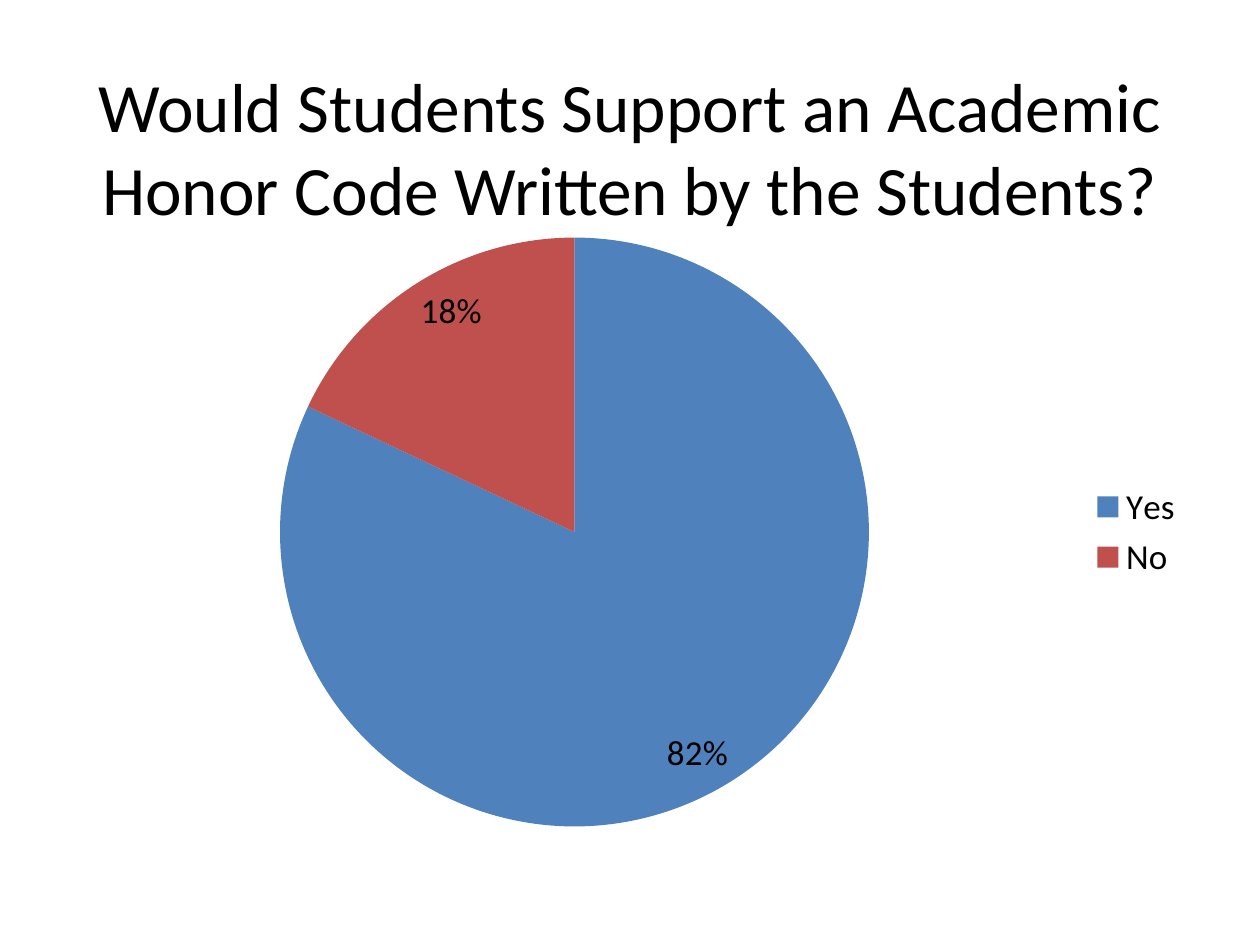
"""Build a slide with a question as title and a pie chart of the answers."""
from dataclasses import dataclass

import pptx
import pptx.chart.data
import pptx.dml.color
import pptx.enum.chart
import pptx.enum.text
import pptx.util

BLACK = pptx.dml.color.RGBColor(0x00, 0x00, 0x00)
BLUE = pptx.dml.color.RGBColor(0x4F, 0x81, 0xBD)
RED = pptx.dml.color.RGBColor(0xC0, 0x50, 0x4D)
WIDTH = pptx.util.Inches(10)
HEIGHT = pptx.util.Inches(7.5)
FONT = "Calibri"
QUESTION = "Would Students Support an Academic Honor Code Written by the Students?"


@dataclass(frozen=True)
class Area:
    left: float
    top: float
    width: float
    height: float

    def lengths(self) -> tuple[int, int, int, int]:
        return (
            round(self.left * WIDTH),
            round(self.top * HEIGHT),
            round(self.width * WIDTH),
            round(self.height * HEIGHT),
        )


@dataclass(frozen=True)
class Answer:
    name: str
    percent: int
    color: pptx.dml.color.RGBColor


TITLE_AREA = Area(0.05, 0.04, 0.9, 0.23)
CHART_AREA = Area(0.05, 0.233, 0.9, 0.66)
ANSWERS = (Answer("Yes", 82, BLUE), Answer("No", 18, RED))


def set_values(target: object, values: dict[str, object]) -> None:
    for name, value in values.items():
        setattr(target, name, value)


def set_font(font: pptx.text.text.Font, size: float) -> None:
    set_values(font, {"name": FONT, "size": pptx.util.Pt(size)})
    font.color.rgb = BLACK


def add_title(slide: pptx.slide.Slide, area: Area, text: str) -> None:
    frame = slide.shapes.add_textbox(*area.lengths()).text_frame
    set_values(frame, {
        "word_wrap": True,
        "vertical_anchor": pptx.enum.text.MSO_ANCHOR.MIDDLE,
        "text": text,
    })
    paragraph = frame.paragraphs[0]
    paragraph.alignment = pptx.enum.text.PP_ALIGN.CENTER
    set_font(paragraph.runs[0].font, 39.6)


def add_pie(slide: pptx.slide.Slide, area: Area, answers: tuple[Answer, ...]) -> None:
    data = pptx.chart.data.CategoryChartData()
    data.categories = [answer.name for answer in answers]
    data.add_series("Series 1", [answer.percent for answer in answers])
    chart = slide.shapes.add_chart(
        pptx.enum.chart.XL_CHART_TYPE.PIE, *area.lengths(), data
    ).chart
    set_font(chart.font, 10)
    set_values(chart, {"has_title": False, "has_legend": True})
    set_values(chart.legend, {
        "position": pptx.enum.chart.XL_LEGEND_POSITION.RIGHT,
        "include_in_layout": False,
    })
    set_font(chart.legend.font, 20)

    plot = chart.plots[0]
    set_values(plot, {"vary_by_categories": True, "has_data_labels": True})
    set_values(plot.data_labels, {
        "show_percentage": True,
        "show_value": False,
        "number_format": "0%",
        "number_format_is_linked": False,
        "position": pptx.enum.chart.XL_LABEL_POSITION.INSIDE_END,
    })
    set_font(plot.data_labels.font, 20)
    for index, answer in enumerate(answers):
        fill = plot.series[0].points[index].format.fill
        fill.solid()
        fill.fore_color.rgb = answer.color


def main() -> None:
    presentation = pptx.Presentation()
    set_values(presentation, {"slide_width": WIDTH, "slide_height": HEIGHT})
    slide = presentation.slides.add_slide(presentation.slide_layouts[6])
    add_title(slide, TITLE_AREA, QUESTION)
    add_pie(slide, CHART_AREA, ANSWERS)
    presentation.save("out.pptx")


if __name__ == "__main__":
    main()
